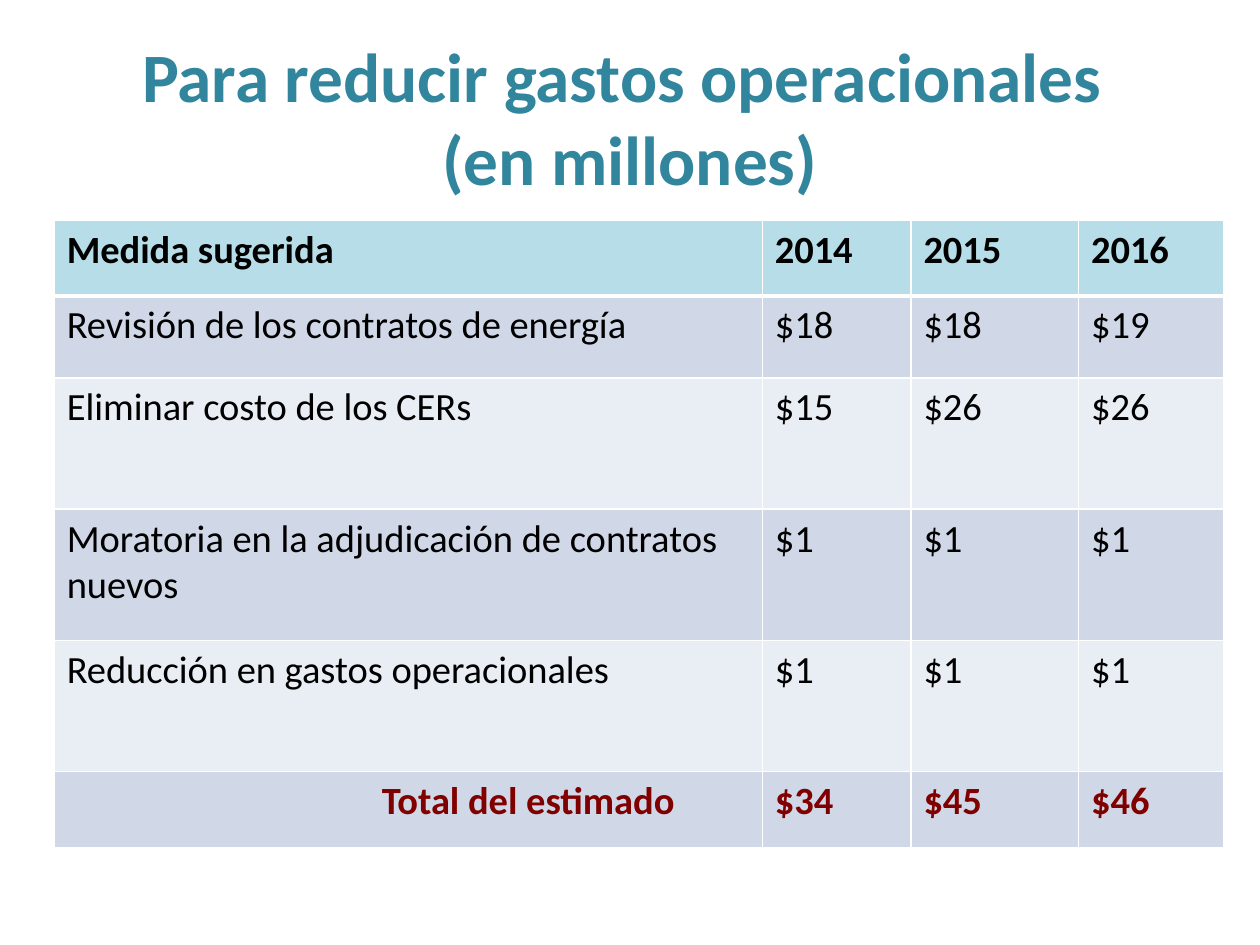
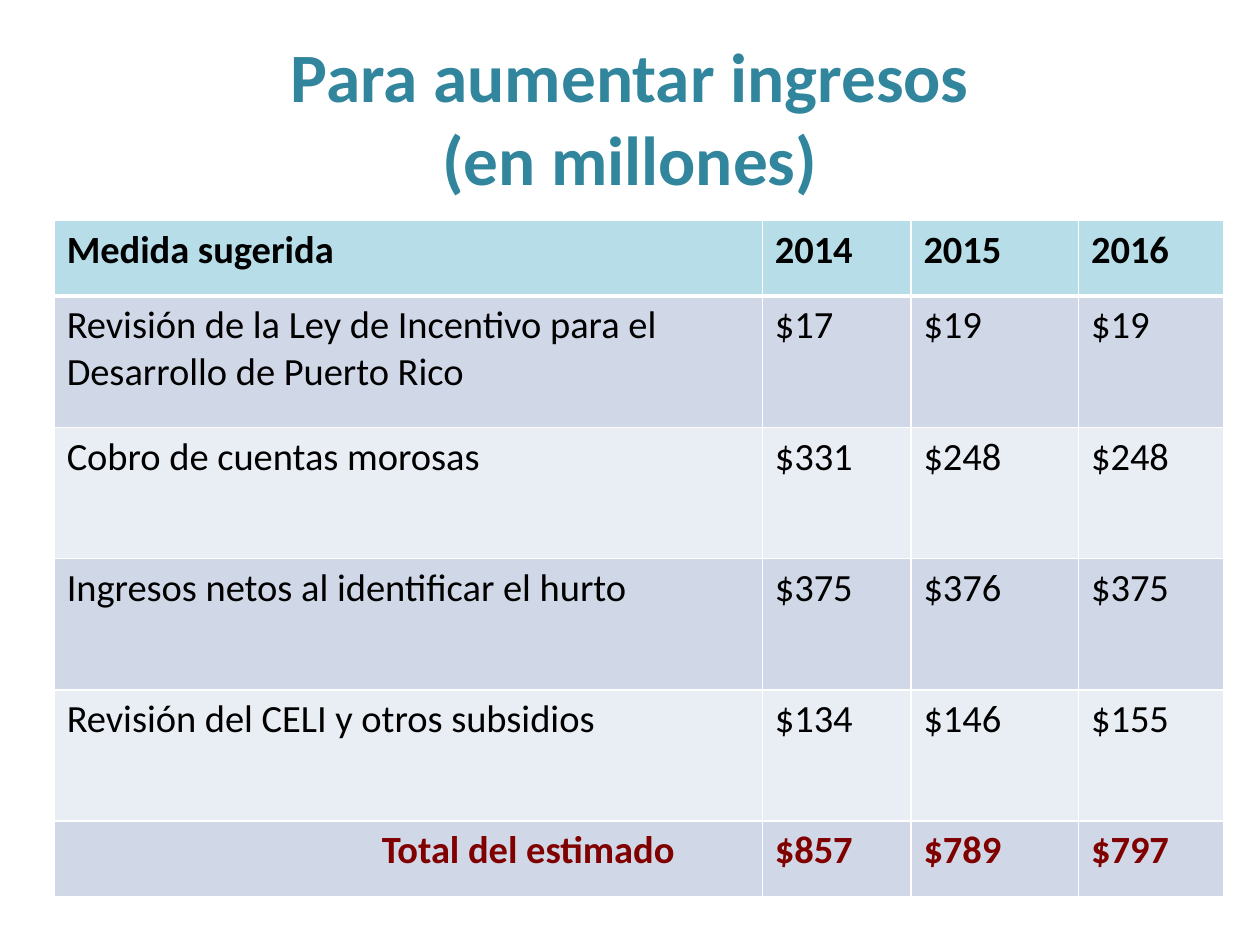
from dataclasses import dataclass

from lxml import etree
from pptx import Presentation
from pptx import util as u
from pptx.dml import color
from pptx.enum import text
from pptx.oxml import ns

COLORS = {
    "title": "31859C",
    "header": "B7DEE8",
    "odd": "D0D8E8",
    "even": "E9EDF4",
    "body": "000000",
    "total": "800000",
    "border": "FFFFFF",
}
FONT = "Calibri"
WIDTH, HEIGHT = u.Inches(10), u.Inches(7.5)
COLUMNS = (0.562, 0.118, 0.133, 0.115)
EDGE_ROW, SHORT_ROW, TALL_ROW = 0.08, 0.0867, 0.1389
TABLE_LEFT, TABLE_TOP = 0.043, 0.2333
TOTAL_INDENT = 0.25
THIN, THICK = 1, 3


@dataclass(frozen=True)
class Measure:
    name: str
    amounts: tuple[int, int, int]
    height: float = TALL_ROW


@dataclass(frozen=True)
class Estimate:
    title: str
    measures: tuple[Measure, ...]
    totals: tuple[int, int, int]


ESTIMATES = (
    Estimate(
        "Para reducir gastos operacionales \v(en millones)",
        (
            Measure("Revisión de los contratos de energía", (18, 18, 19), SHORT_ROW),
            Measure("Eliminar costo de los CERs", (15, 26, 26)),
            Measure("Moratoria en la adjudicación de contratos nuevos", (1, 1, 1)),
            Measure("Reducción en gastos operacionales", (1, 1, 1)),
        ),
        (34, 45, 46),
    ),
    Estimate(
        "Para aumentar ingresos\v(en millones)",
        (
            Measure("Revisión de la Ley de Incentivo para el Desarrollo de Puerto Rico", (17, 19, 19)),
            Measure("Cobro de cuentas morosas", (331, 248, 248)),
            Measure("Ingresos netos al identificar el hurto", (375, 376, 375)),
            Measure("Revisión del CELI y otros subsidios", (134, 146, 155)),
        ),
        (857, 789, 797),
    ),
)


def across(share: float) -> int:
    return round(WIDTH * share)


def down(share: float) -> int:
    return round(HEIGHT * share)


def rgb(name: str) -> color.RGBColor:
    return color.RGBColor.from_string(COLORS[name])


def write(frame, content: str, *, size: float = 22, ink: str = "body",
          bold: bool = False, align=text.PP_ALIGN.LEFT, indent: int = 0) -> None:
    para = frame.paragraphs[0]
    para.text = content
    para.alignment = align
    if indent:
        para._p.get_or_add_pPr().set("marL", str(indent))
    for span in para.runs:
        span.font.name = FONT
        span.font.size = u.Pt(size)
        span.font.bold = bold
        span.font.color.rgb = rgb(ink)


def add_title(page, content: str) -> None:
    box = page.shapes.add_textbox(across(0.05), down(0.04), across(0.9), down(1 / 6))
    frame = box.text_frame
    frame.word_wrap = True
    frame.vertical_anchor = text.MSO_ANCHOR.MIDDLE
    write(frame, content, size=39.6, ink="title", bold=True, align=text.PP_ALIGN.CENTER)


def set_borders(cell, **widths: int) -> None:
    properties = cell._tc.get_or_add_tcPr()
    for side in "LRTB":
        line = etree.SubElement(properties, ns.qn(f"a:ln{side}"),
                                w=str(u.Pt(widths.get(side, THIN))))
        fill = etree.SubElement(line, ns.qn("a:solidFill"))
        etree.SubElement(fill, ns.qn("a:srgbClr"), val=COLORS["border"])


def add_estimate_table(page, estimate: Estimate) -> None:
    header = Measure("Medida sugerida", (2014, 2015, 2016), EDGE_ROW)
    total = Measure("Total del estimado", estimate.totals, EDGE_ROW)
    rows = (header, *estimate.measures, total)
    last = len(rows) - 1
    table = page.shapes.add_table(
        len(rows), len(COLUMNS), across(TABLE_LEFT), down(TABLE_TOP),
        across(sum(COLUMNS)), down(sum(row.height for row in rows))).table
    for column, share in zip(table.columns, COLUMNS):
        column.width = across(share)
    for r, row in enumerate(rows):
        table.rows[r].height = down(row.height)
        sign = "$" if r else ""
        values = (row.name, *(f"{sign}{amount}" for amount in row.amounts))
        paint = "header" if r == 0 else "odd" if r % 2 else "even"
        for c, value in enumerate(values):
            cell = table.cell(r, c)
            set_borders(cell, T=THICK if r == 1 else THIN, B=THICK if r == 0 else THIN)
            cell.fill.solid()
            cell.fill.fore_color.rgb = rgb(paint)
            write(cell.text_frame, value, bold=r in (0, last),
                  ink="total" if r == last else "body",
                  indent=across(TOTAL_INDENT) if r == last and c == 0 else 0)


def main() -> None:
    deck = Presentation()
    deck.slide_width, deck.slide_height = WIDTH, HEIGHT
    for estimate in ESTIMATES:
        page = deck.slides.add_slide(deck.slide_layouts[6])
        add_title(page, estimate.title)
        add_estimate_table(page, estimate)
    deck.save("out.pptx")


if __name__ == "__main__":
    main()
